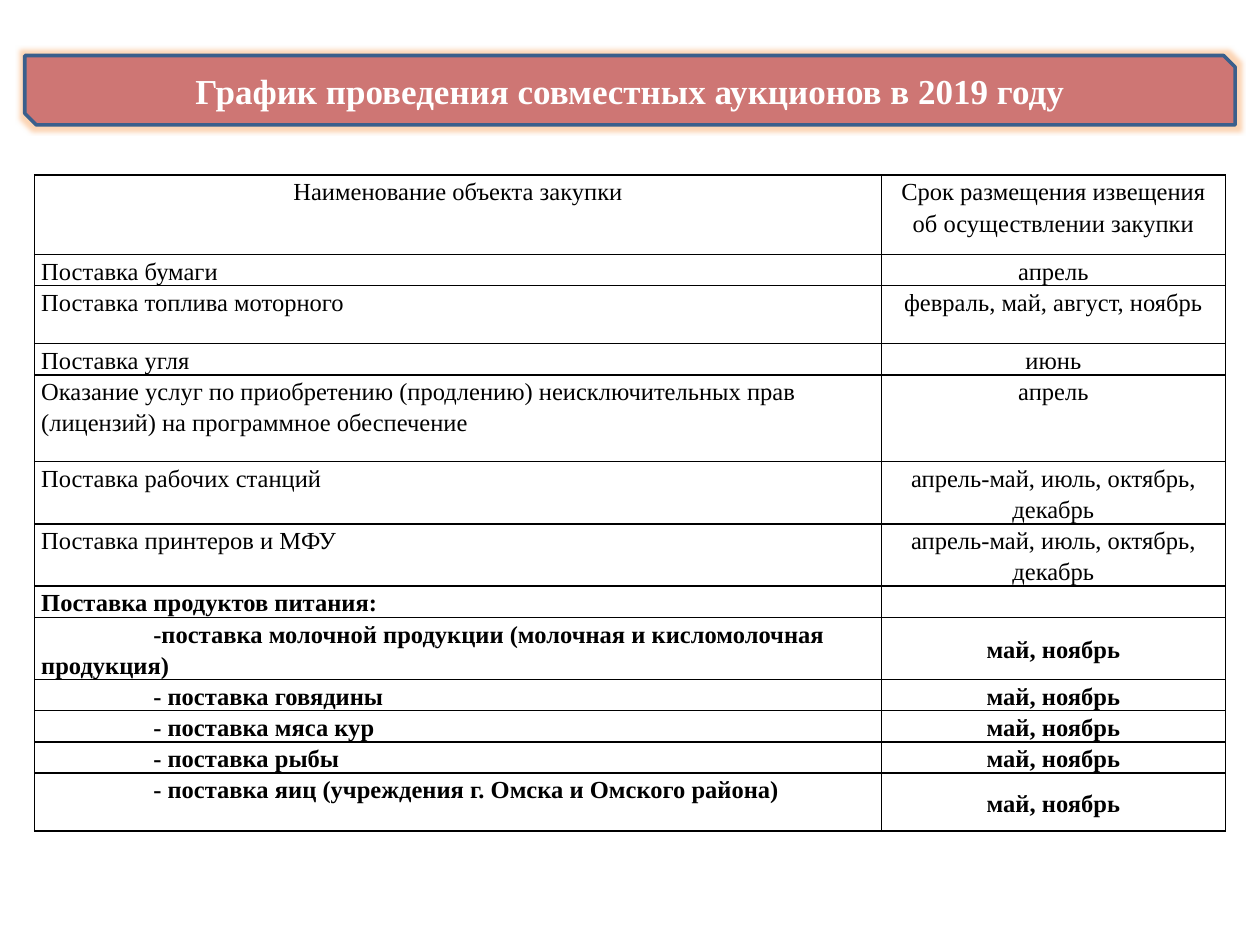
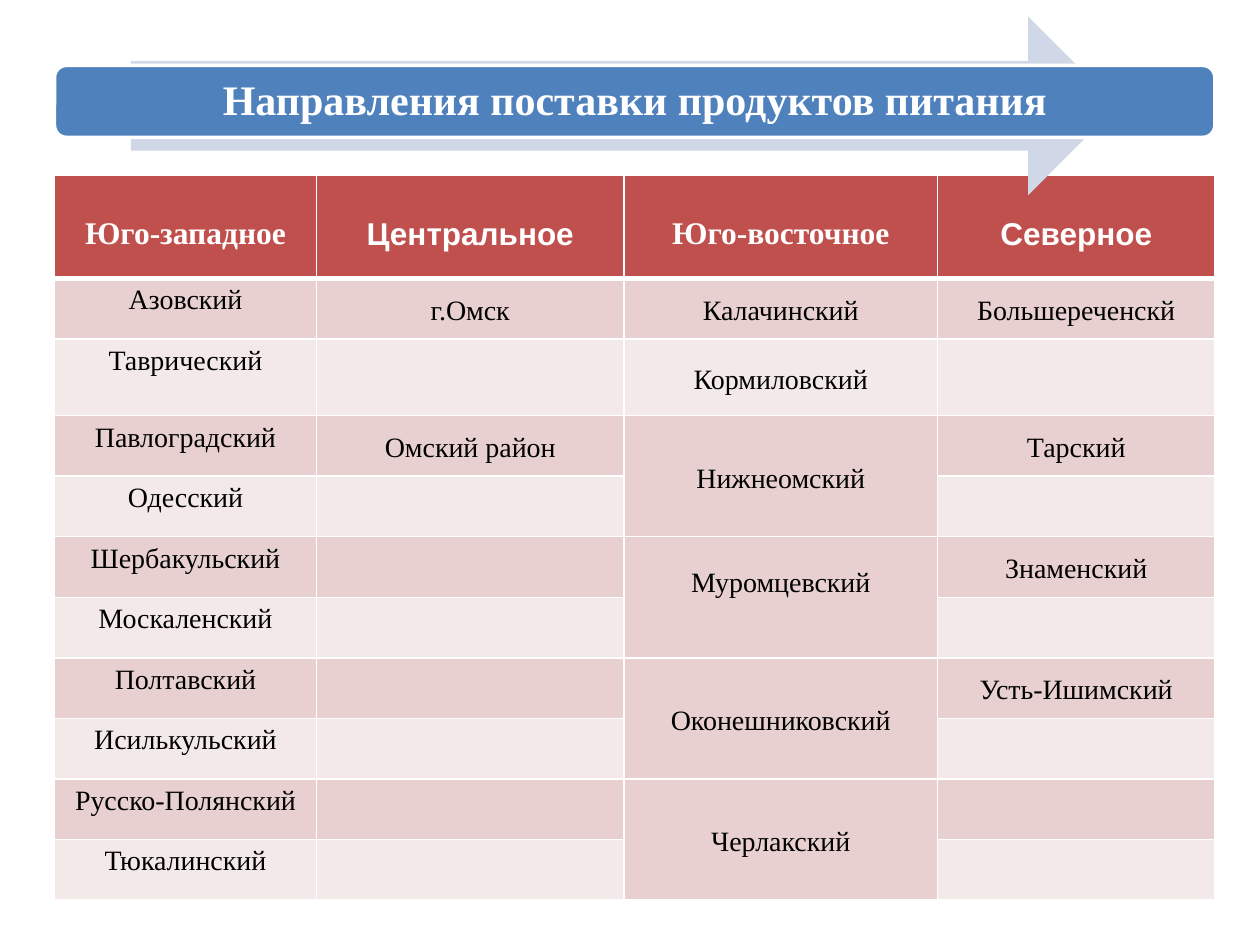
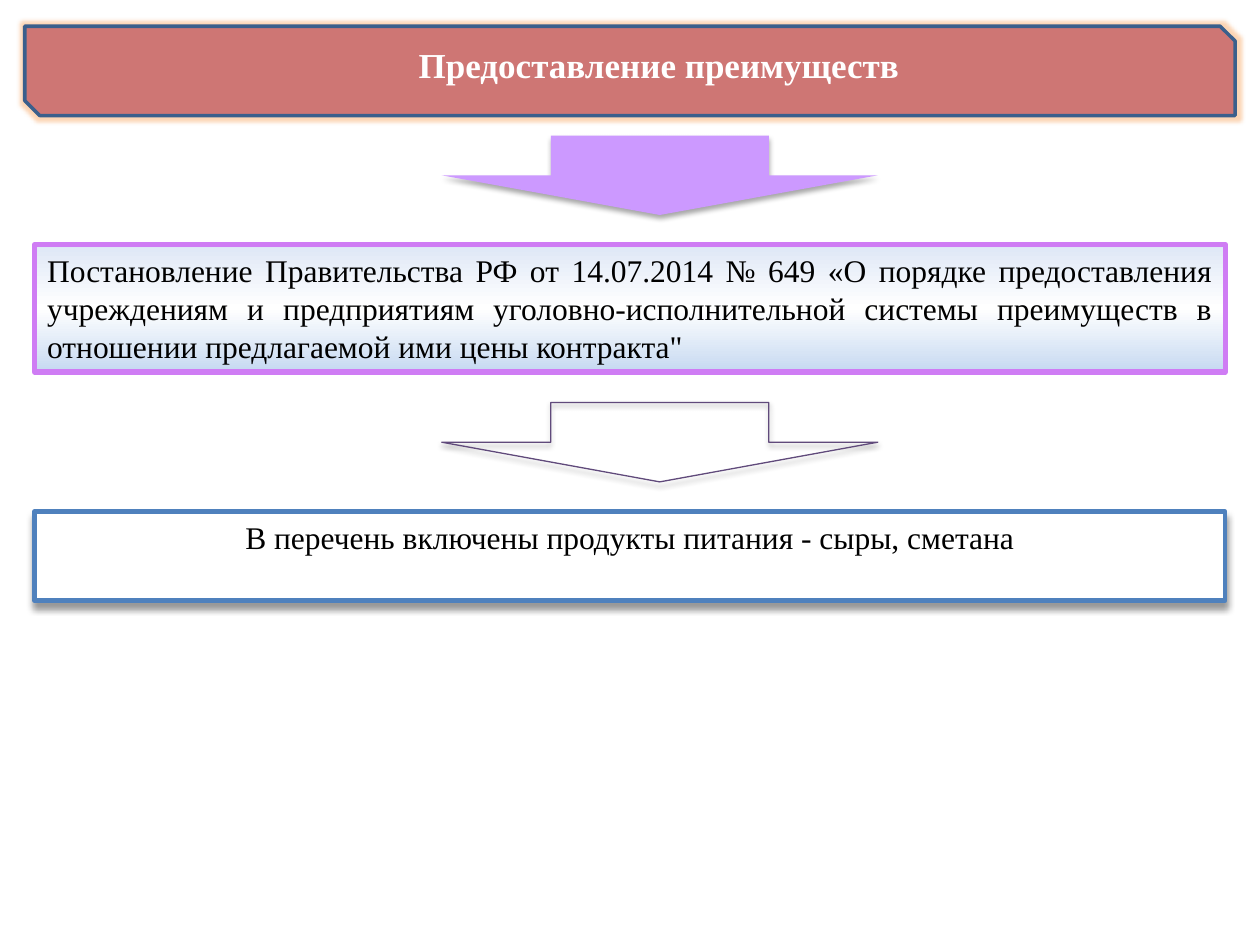
import dataclasses
import typing

import lxml.etree
import pptx
import pptx.dml.color
import pptx.enum.shapes
import pptx.enum.text
import pptx.oxml.ns
import pptx.util

Cm = pptx.util.Cm
Pt = pptx.util.Pt
qn = pptx.oxml.ns.qn
Kind = pptx.enum.shapes.MSO_SHAPE
Align = pptx.enum.text.PP_ALIGN
Anchor = pptx.enum.text.MSO_ANCHOR

SERIF = "Times New Roman"
SANS = "Arial"
WHITE, BLACK = "FFFFFF", "000000"
ROSE, NAVY, GLOW = "CE7674", "3A5F8C", "F79646"
BLUE, PALE = "4F81BD", "D0D8E8"
RED, BANDS = "C0504D", ("E8D0D0", "F4E9E9")
LILAC, VIOLET, PLUM = "CC99FF", "CF7CF4", "604A7B"


@dataclasses.dataclass
class Shade:
    """Drop shadow below a shape: percent and points."""
    alpha: int
    blur: float
    dist: float


@dataclasses.dataclass
class Box:
    """Preset shape, placed in centimetres; several fills make a gradient."""
    kind: Kind
    left: float
    top: float
    width: float
    height: float
    fills: tuple[str, ...] = ()
    edge: str = ""
    weight: float = 0
    turn: int = 0
    shade: typing.Optional[Shade] = None
    glow: str = ""


@dataclasses.dataclass
class Style:
    """Text format; pads are left, top, right, bottom in centimetres."""
    size: float
    color: str = BLACK
    bold: bool = False
    font: str = SERIF
    align: Align = Align.CENTER
    anchor: Anchor = Anchor.TOP
    pads: tuple[float, ...] = (0.25, 0.13, 0.25, 0.13)
    space: float = 1.0


def paint(color: str) -> pptx.dml.color.RGBColor:
    return pptx.dml.color.RGBColor.from_string(color)


def add(node, tag: str, **attrs):
    """Append a drawing element with the given attributes."""
    return lxml.etree.SubElement(node, qn(tag), {k: str(v) for k, v in attrs.items()})


def tint(node, color: str, alpha: int) -> None:
    add(add(node, "a:srgbClr", val=color), "a:alpha", val=alpha * 1000)


def blend(fill, colors: tuple[str, ...]) -> None:
    """Fill from top to bottom with evenly spaced stops."""
    fill.gradient()
    fill.gradient_angle = 270
    stops = fill._xPr.find(qn("a:gradFill")).find(qn("a:gsLst"))
    for stop in list(stops):
        stops.remove(stop)
    for i, color in enumerate(colors):
        stop = add(stops, "a:gs", pos=i * 100000 // (len(colors) - 1))
        add(stop, "a:srgbClr", val=color)


def draw(slide, box: Box):
    shape = slide.shapes.add_shape(
        box.kind, Cm(box.left), Cm(box.top), Cm(box.width), Cm(box.height))
    shape.rotation = box.turn
    if len(box.fills) > 1:
        blend(shape.fill, box.fills)
    elif box.fills:
        shape.fill.solid()
        shape.fill.fore_color.rgb = paint(box.fills[0])
    else:
        shape.fill.background()
    if box.edge:
        shape.line.color.rgb = paint(box.edge)
        shape.line.width = Pt(box.weight)
    else:
        shape.line.fill.background()
    shape.shadow.inherit = False
    effects = shape.element.spPr.find(qn("a:effectLst"))
    if box.glow:
        tint(add(effects, "a:glow", rad=Pt(5)), box.glow, 40)
    if box.shade:
        drop = add(effects, "a:outerShdw", blurRad=Pt(box.shade.blur),
                   dist=Pt(box.shade.dist), dir=90 * 60000, rotWithShape=0)
        tint(drop, BLACK, box.shade.alpha)
    return shape


def write(frame, text: str, style: Style) -> None:
    frame.text = text
    frame.word_wrap = True
    for para in frame.paragraphs:
        para.alignment = style.align
        para.line_spacing = style.space
        for run in para.runs:
            run.font.size = Pt(style.size)
            run.font.name = style.font
            run.font.bold = style.bold
            run.font.color.rgb = paint(style.color)
        if not para.runs:
            add(para._p, "a:endParaRPr", sz=int(style.size * 100))


def label(shape, text: str, style: Style) -> None:
    frame = shape.text_frame
    write(frame, text, style)
    frame.auto_size = pptx.enum.text.MSO_AUTO_SIZE.NONE
    frame.vertical_anchor = style.anchor
    (frame.margin_left, frame.margin_top,
     frame.margin_right, frame.margin_bottom) = map(Cm, style.pads)


def head(slide, text: str, place: tuple[float, ...], size: float,
         space: float = 1.0) -> None:
    """Put the slide title in front of its band."""
    title = slide.shapes.title
    title.left, title.top, title.width, title.height = map(Cm, place)
    label(title, text, Style(size, WHITE, True, anchor=Anchor.MIDDLE, space=space))
    title.element.getparent().append(title.element)


def band(top: float, height: float) -> Box:
    return Box(Kind.SNIP_2_DIAG_RECTANGLE, 0.5, top, 24.4, height,
               (ROSE,), NAVY, 2, glow=GLOW)


def grid(slide, left: float, top: float, cols: list[float], rows: list[float]):
    table = slide.shapes.add_table(
        len(rows), len(cols), Cm(left), Cm(top), Cm(sum(cols)), Cm(sum(rows))).table
    table.first_row = table.horz_banding = False
    for col, width in zip(table.columns, cols):
        col.width = Cm(width)
    for row, height in zip(table.rows, rows):
        row.height = Cm(height)
    return table


def fill_cell(cell, text: str, style: Style, fill: str, edge: str,
              base: float = 1) -> None:
    """Write and colour a cell; base is the weight of its lower border."""
    write(cell.text_frame, text, style)
    cell.vertical_anchor = style.anchor
    (cell.margin_left, cell.margin_top,
     cell.margin_right, cell.margin_bottom) = map(Cm, style.pads)
    props = cell._tc.get_or_add_tcPr()
    for side, weight in (("L", 1), ("R", 1), ("T", 1), ("B", base)):
        line = add(props, f"a:ln{side}", w=Pt(weight))
        add(add(line, "a:solidFill"), "a:srgbClr", val=edge)
    if fill:
        cell.fill.solid()
        cell.fill.fore_color.rgb = paint(fill)
    else:
        cell.fill.background()


TERM = "апрель-май, июль, октябрь, декабрь"
FOOD = "май, ноябрь"
PLAN = [
    (1.6, "Наименование объекта закупки",
     "Срок размещения извещения об осуществлении закупки"),
    (0.58, "Поставка бумаги", "апрель"),
    (1.17, "Поставка топлива моторного", "февраль, май, август, ноябрь"),
    (0.58, "Поставка угля", "июнь"),
    (1.75, "Оказание услуг по приобретению (продлению) неисключительных прав "
     "(лицензий) на программное обеспечение", "апрель"),
    (1.17, "Поставка рабочих станций", TERM),
    (1.17, "Поставка принтеров и МФУ", TERM),
    (0.58, "Поставка продуктов питания:", ""),
    (1.17, "-поставка молочной продукции (молочная и кисломолочная продукция)", FOOD),
    (0.58, "- поставка говядины", FOOD),
    (0.58, "- поставка мяса кур", FOOD),
    (0.58, "- поставка рыбы", FOOD),
    (1.17, "- поставка яиц (учреждения г. Омска и Омского района)", FOOD),
]


def show_plan(slide) -> None:
    draw(slide, band(1.12, 1.4))
    head(slide, "График проведения совместных аукционов в 2019 году",
         (0.5, 1.12, 24.4, 1.4), 20)
    table = grid(slide, 0.7, 3.53, [17.07, 6.93], [row[0] for row in PLAN])
    for i, (_, name, term) in enumerate(PLAN):
        food = name.startswith("-")
        style = Style(14, bold=food or name.endswith(":"),
                      pads=(0.13, 0, 0.13, 0), space=1.15)
        left = dataclasses.replace(style, align=Align.CENTER if i == 0 else Align.LEFT)
        right = dataclasses.replace(style, anchor=Anchor.MIDDLE if food else Anchor.TOP)
        fill_cell(table.cell(i, 0), name, left, "", BLACK)
        fill_cell(table.cell(i, 1), term, right, "", BLACK)
        if food:
            para = table.cell(i, 0).text_frame.paragraphs[0]
            para._p.get_or_add_pPr().set("indent", str(Cm(2.26)))


HEADS = [("Юго-западное", SERIF), ("Центральное", SANS),
         ("Юго-восточное", SERIF), ("Северное", SANS)]
AREAS = [
    ("Азовский", "г.Омск", "Калачинский", "Большереченскй"),
    ("Таврический", "", "Кормиловский", ""),
    ("Павлоградский", "Омский район", "Нижнеомский", "Тарский"),
    ("Одесский", "", "", ""),
    ("Шербакульский", "", "Муромцевский", "Знаменский"),
    ("Москаленский", "", "", ""),
    ("Полтавский", "", "Оконешниковский", "Усть-Ишимский"),
    ("Исилькульский", "", "", ""),
    ("Русско-Полянский", "", "Черлакский", ""),
    ("Тюкалинский", "", "", ""),
]


def show_areas(slide) -> None:
    table = grid(slide, 1.1, 3.53, [5.28, 6.2, 6.32, 5.59],
                 [2.08, 1.22, 1.55] + [1.22] * 8)
    for j, (name, font) in enumerate(HEADS):
        style = Style(18, WHITE, True, font, pads=(0.25, 0.84, 0.25, 0.13))
        fill_cell(table.cell(0, j), name, style, RED, WHITE, base=3)
    first = Style(16)
    other = Style(16, anchor=Anchor.MIDDLE, pads=(0.18, 0, 0.18, 0), space=1.15)
    raised = dataclasses.replace(other, pads=(0.18, 0, 0.18, 0.65))
    for i, row in enumerate(AREAS):
        for j, name in enumerate(row):
            style = first if j == 0 else raised if name == "Муромцевский" else other
            fill_cell(table.cell(i + 1, j), name, style, BANDS[i % 2], WHITE)
    for i in range(3, len(AREAS), 2):
        table.cell(i, 2).merge(table.cell(i + 1, 2))
    place = (1.1, 1.32, 23.39, 1.45)
    draw(slide, Box(Kind.RIGHT_ARROW, 2.64, 0.33, 19.89, 3.61, (PALE,)))
    draw(slide, Box(Kind.ROUNDED_RECTANGLE, *place, (BLUE,), WHITE, 2))
    head(slide, "Направления поставки продуктов питания", place, 24, 0.9)


def show_perks(slide) -> None:
    soft = Shade(35, 3.1, 1.8)
    arrow = Box(Kind.RIGHT_ARROW, 12.5, -0.86, 1.6, 8.79, (LILAC,), turn=90, shade=soft)
    law = draw(slide, Box(Kind.RECTANGLE, 0.7, 4.93, 24, 2.57,
                          ("DEE7F6", WHITE, "C6D9F1"), VIOLET, 3))
    label(law, "Постановление Правительства РФ от 14.07.2014 № 649 «О порядке "
          "предоставления учреждениям и предприятиям уголовно-исполнительной системы "
          "преимуществ в отношении предлагаемой ими цены контракта\"",
          Style(18, align=Align.JUSTIFY))
    draw(slide, arrow)
    draw(slide, dataclasses.replace(arrow, top=4.52, fills=(), edge=PLUM, weight=0.75))
    goods = draw(slide, Box(Kind.RECTANGLE, 0.7, 10.31, 24, 1.8, (WHITE,), BLUE, 2.5,
                            shade=Shade(40, 4, 3)))
    label(goods, "В перечень включены продукты питания - сыры, сметана", Style(18))
    draw(slide, band(0.53, 1.8))
    head(slide, "Предоставление преимуществ", (7.57, 0.74, 11.43, 1.12), 20)


def main() -> None:
    deck = pptx.Presentation()
    deck.slide_width, deck.slide_height = Cm(25.4), Cm(19.05)
    for show in (show_plan, show_areas, show_perks):
        show(deck.slides.add_slide(deck.slide_layouts[5]))
    deck.save("out.pptx")


if __name__ == "__main__":
    main()
